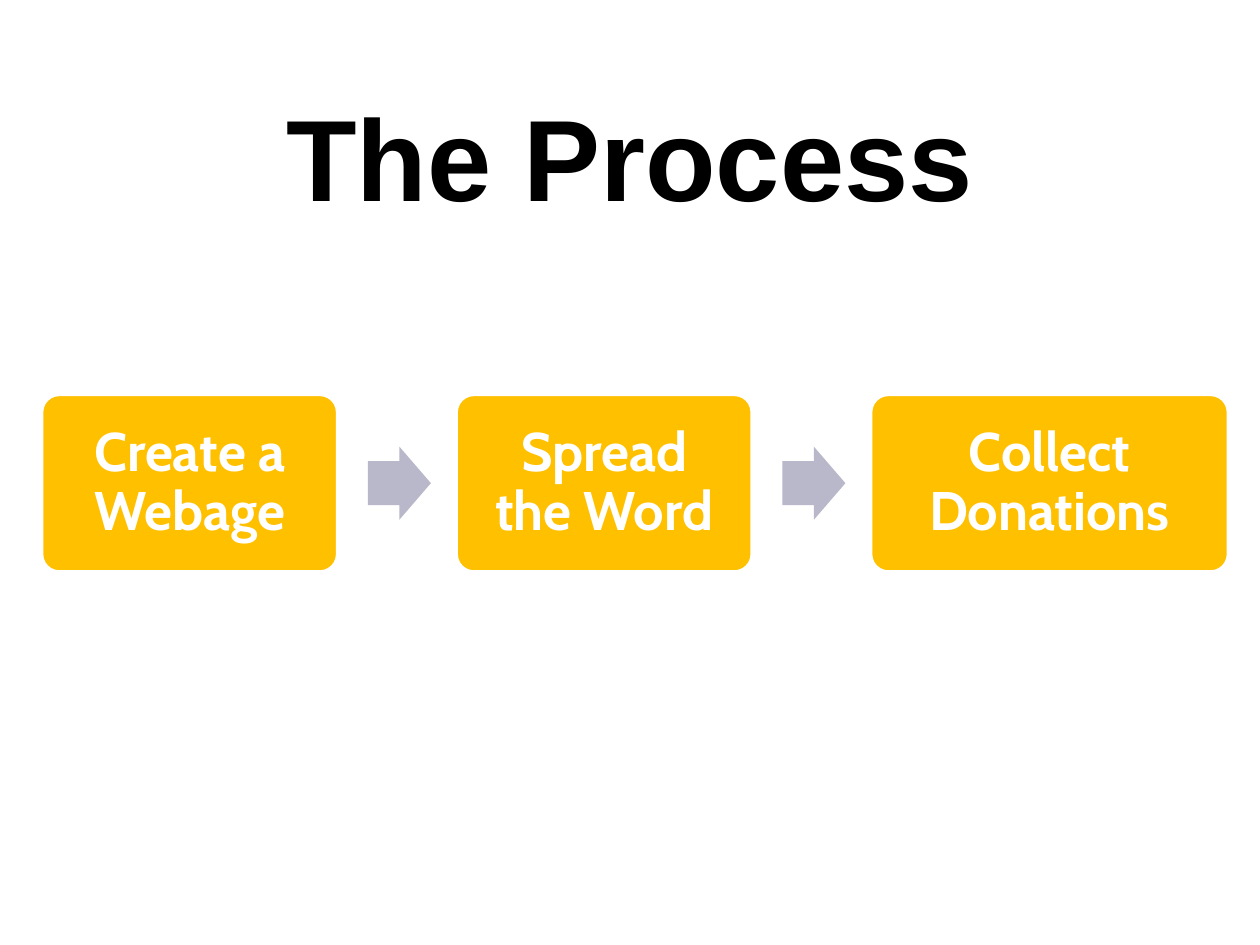
from pptx import Presentation
from pptx.dml.color import RGBColor
from pptx.enum.shapes import MSO_SHAPE
from pptx.enum.text import MSO_ANCHOR, PP_ALIGN
from pptx.util import Inches, Pt

WIDTH, HEIGHT = 10, 7.5
FIRST_LEFT, STEP_PITCH = 0.33, 3.29
STEP_TOP, STEP_HEIGHT = 3.13, 1.41
ARROW_OFFSET, ARROW_WIDTH, ARROW_HEIGHT = 2.59, 0.5, 0.58
STEPS = [("Create a Webage", 2.35), ("Spread the Word", 2.35), ("Collect Donations", 2.84)]


def color(value):
    return RGBColor.from_string(value)


class ProcessSlide:
    title_font = {"name": "Arial", "size": Pt(66), "bold": True}
    step_font = {"name": "Cabin", "size": Pt(31), "bold": True}
    step_fill, arrow_fill, white, black = "FFC000", "B8B8CA", "FFFFFF", "000000"

    def __init__(self, slide):
        self.slide = slide

    def set_text(self, shape, text, font, font_color, anchor, inset):
        frame = shape.text_frame
        settings = {"word_wrap": True, "vertical_anchor": anchor,
                    "margin_left": inset, "margin_right": inset}
        for name, value in settings.items():
            setattr(frame, name, value)
        paragraph = frame.paragraphs[0]
        paragraph.text = text
        paragraph.alignment = PP_ALIGN.CENTER
        for name, value in font.items():
            setattr(paragraph.font, name, value)
        paragraph.font.color.rgb = color(font_color)
        return paragraph

    def title(self, text, *box):
        shape = self.slide.shapes.add_textbox(*map(Inches, box))
        self.set_text(shape, text, self.title_font, self.black, MSO_ANCHOR.BOTTOM, Inches(0.1))

    def block(self, kind, box, fill, adjustments):
        shape = self.slide.shapes.add_shape(kind, *map(Inches, box))
        shape.shadow.inherit = False
        shape.fill.solid()
        shape.fill.fore_color.rgb = color(fill)
        shape.line.fill.background()
        for index, value in enumerate(adjustments):
            shape.adjustments[index] = value
        return shape

    def step(self, text, left, width):
        shape = self.block(MSO_SHAPE.ROUNDED_RECTANGLE,
                           (left, STEP_TOP, width, STEP_HEIGHT), self.step_fill, [0.1])
        shape.line.color.rgb = color(self.white)
        shape.line.width = Pt(2)
        paragraph = self.set_text(shape, text, self.step_font, self.white,
                                  MSO_ANCHOR.MIDDLE, Inches(0.15))
        paragraph.line_spacing = 0.9

    def arrow(self, left):
        top = STEP_TOP + (STEP_HEIGHT - ARROW_HEIGHT) / 2
        self.block(MSO_SHAPE.RIGHT_ARROW, (left, top, ARROW_WIDTH, ARROW_HEIGHT),
                   self.arrow_fill, [0.6, 0.5])


def main():
    presentation = Presentation()
    presentation.slide_width, presentation.slide_height = Inches(WIDTH), Inches(HEIGHT)
    page = ProcessSlide(presentation.slides.add_slide(presentation.slide_layouts[6]))
    page.title("The Process", 0.75, 0.58, 8.5, 1.25)
    for column, (text, width) in enumerate(STEPS):
        left = FIRST_LEFT + column * STEP_PITCH
        page.step(text, left, width)
        if column < len(STEPS) - 1:
            page.arrow(left + ARROW_OFFSET)
    presentation.save("out.pptx")


if __name__ == "__main__":
    main()
